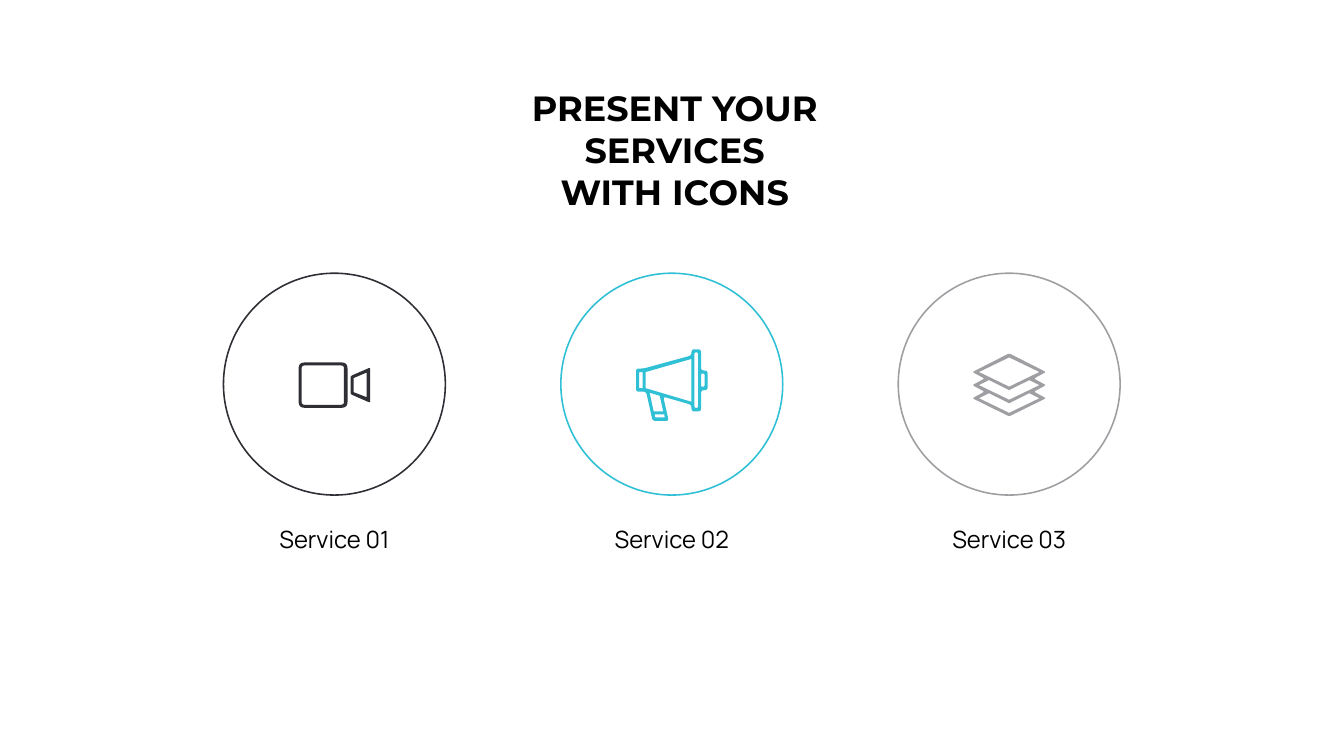
"""Build a slide that presents three services with circled icons."""
from pptx import Presentation
from pptx import util as u
from pptx.dml.color import RGBColor
from pptx.enum import shapes, text

BLACK = RGBColor(0x00, 0x00, 0x00)
DARK = RGBColor(0x2E, 0x2E, 0x35)
CYAN = RGBColor(0x2F, 0xC0, 0xD6)
GREY = RGBColor(0x9F, 0x9E, 0xA2)

ICON_UNIT = u.Cm(2.54) / 100
FIRST_CENTRE, PITCH = 16.85, 17.0
CIRCLE_MIDDLE, DIAMETER = 19.36, 11.18
ICON_MIDDLE = 19.41


def rectangle(left, top, right, bottom):
    return [(left, top), (right, top), (right, bottom), (left, bottom)]


def mirrored(right_side):
    return right_side + [(-x, y) for x, y in reversed(right_side) if x]


def layer_hole(shift):
    corners = [(0, 10), (40, -10), (60, 0), (0, 29)]
    return mirrored([(x, y + shift) for x, y in corners])


CAMERA = [
    (rectangle(-71, -45, 26, 45), 12),
    (rectangle(-65, -39, 19, 39), 6),
    ([(32, -18), (71, -35), (71, 35), (32, 18)], 4),
    ([(38, -14), (64, -25), (64, 24), (38, 14)], 0),
]
MEGAPHONE = [
    ([(-71, -33), (-56, -33), (39, -59), (39, -71), (58, -71), (58, -29),
      (71, -29), (71, 10), (58, 10), (58, 52), (39, 52), (39, 39),
      (-17, 23), (-6, 71), (-38, 71), (-51, 13), (-71, 13)], 6),
    (rectangle(58, -23, 65, 3), 3),
    (rectangle(45, -65, 52, 45), 3),
    ([(39, -52), (39, 33), (-52, 6), (-52, -26)], 0),
    ([(-17, 52), (-36, 52), (-44, 15), (-24, 21)], 0),
    ([(-14, 64), (-33, 64), (-34, 58), (-15, 58)], 0),
    (rectangle(-65, -26, -58, 6), 0),
]
LAYERS = [
    (mirrored([(0, -63), (73, -26), (49, -13), (73, 0), (49, 13),
               (73, 26), (0, 62)]), 4),
    (mirrored([(0, -55), (60, -26), (0, 3)]), 0),
    (layer_hole(0), 0),
    (layer_hole(26), 0),
]
SERVICES = [
    ("Service 01", CAMERA, DARK),
    ("Service 02", MEGAPHONE, CYAN),
    ("Service 03", LAYERS, GREY),
]


def rounded(corners, radius, steps=6):
    if not radius:
        return corners
    points = []
    for index, corner in enumerate(corners):
        ends = []
        for other in (corners[index - 1], corners[(index + 1) % len(corners)]):
            dx, dy = other[0] - corner[0], other[1] - corner[1]
            share = min(0.5, radius / (dx * dx + dy * dy) ** 0.5)
            ends.append((corner[0] + dx * share, corner[1] + dy * share))
        for step in range(steps + 1):
            t = step / steps
            points.append(tuple(
                (1 - t) ** 2 * a + 2 * t * (1 - t) * b + t ** 2 * c
                for a, b, c in zip(ends[0], corner, ends[1])))
    return points


def add_circle(page, centre, color):
    circle = page.shapes.add_shape(
        shapes.MSO_SHAPE.OVAL,
        u.Cm(centre - DIAMETER / 2), u.Cm(CIRCLE_MIDDLE - DIAMETER / 2),
        u.Cm(DIAMETER), u.Cm(DIAMETER))
    circle.shadow.inherit = False
    circle.fill.background()
    circle.line.color.rgb = color
    circle.line.width = u.Pt(2.25)


def add_icon(page, centre, contours, color):
    builder = None
    for corners, radius in contours:
        first, *rest = [(x * ICON_UNIT, y * ICON_UNIT)
                        for x, y in rounded(corners, radius)]
        if builder is None:
            builder = page.shapes.build_freeform(*first)
        else:
            builder.move_to(*first)
        builder.add_line_segments(rest, close=True)
    icon = builder.convert_to_shape(u.Cm(centre), u.Cm(ICON_MIDDLE))
    icon.shadow.inherit = False
    icon.fill.solid()
    icon.fill.fore_color.rgb = color
    icon.line.fill.background()


def add_text(page, lines, left, top, width, height, *, font, size,
             bold=False, wrap=False, inset=0.25):
    box = page.shapes.add_textbox(
        u.Cm(left), u.Cm(top), u.Cm(width), u.Cm(height))
    frame = box.text_frame
    frame.word_wrap = wrap
    frame.auto_size = text.MSO_AUTO_SIZE.SHAPE_TO_FIT_TEXT
    frame.margin_left = frame.margin_right = u.Cm(inset)
    for index, line in enumerate(lines):
        para = frame.add_paragraph() if index else frame.paragraphs[0]
        para.alignment = text.PP_ALIGN.CENTER
        span = para.add_run()
        span.text = line
        span.font.name = font
        span.font.size = u.Pt(size)
        span.font.bold = bold
        span.font.color.rgb = BLACK


def main():
    deck = Presentation()
    deck.slide_width, deck.slide_height = u.Cm(67.72), u.Cm(38.1)
    page = deck.slides.add_slide(deck.slide_layouts[6])
    add_text(page, ["PRESENT YOUR SERVICES", "WITH ICONS"],
             21.87, 4.24, 24.26, 4.52,
             font="Montserrat", size=50, bold=True, wrap=True, inset=1)
    for index, (label, contours, color) in enumerate(SERVICES):
        centre = FIRST_CENTRE + index * PITCH
        add_circle(page, centre, color)
        add_icon(page, centre, contours, color)
        add_text(page, [label], centre - 3.15, 26.31, 6.3, 1.7,
                 font="Manrope", size=34)
    deck.save("out.pptx")


if __name__ == "__main__":
    main()
